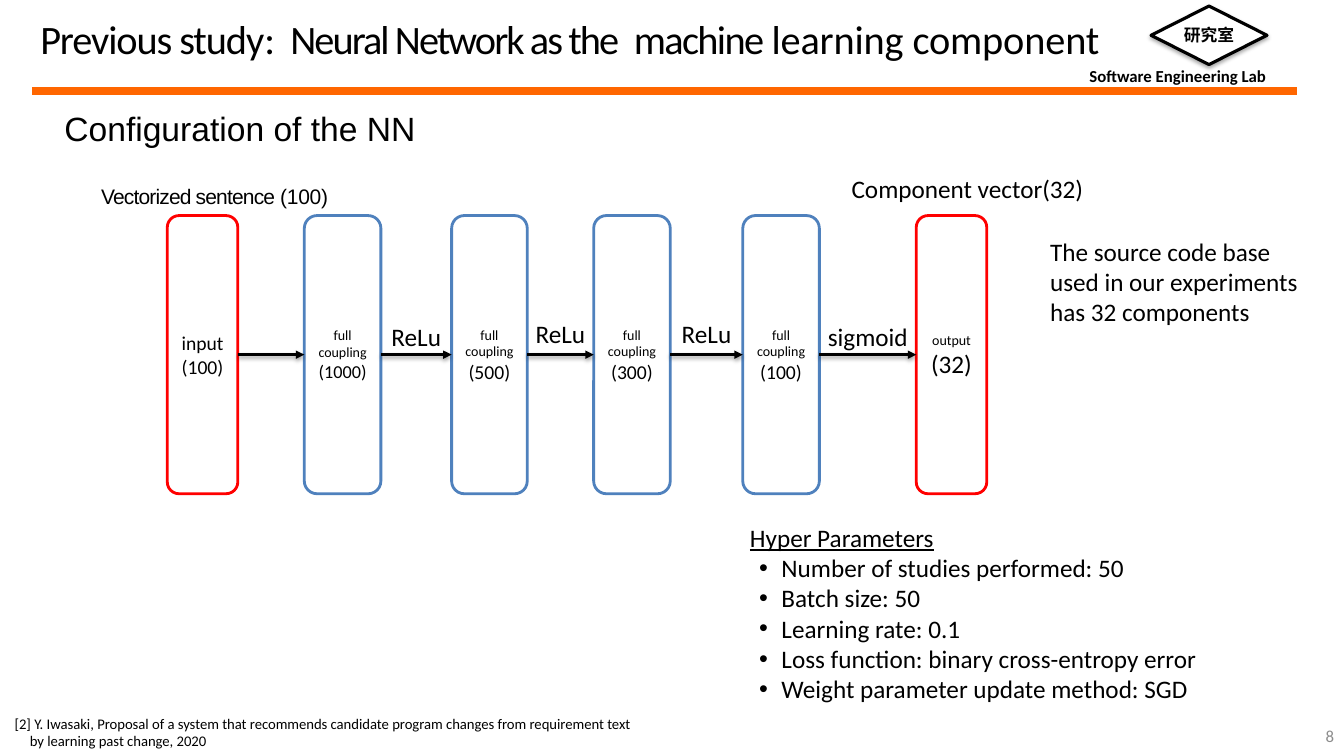
from lxml.etree import SubElement
from pptx import Presentation
from pptx.dml.color import RGBColor
from pptx.enum.shapes import MSO_CONNECTOR, MSO_SHAPE
from pptx.enum.text import MSO_ANCHOR as Anchor, MSO_AUTO_SIZE as AutoSize, PP_ALIGN as Align
from pptx.oxml.ns import qn
from pptx.util import Pt

BLACK = RGBColor(0, 0, 0)
WHITE = RGBColor(0xFF, 0xFF, 0xFF)
ORANGE = RGBColor(0xFF, 0x66, 0x00)
BLUE = RGBColor(0x4F, 0x81, 0xBD)
RED = RGBColor(0xFF, 0, 0)
GRAY = RGBColor(0x8C, 0x8C, 0x8C)

# Content: title and vector caption as (text, letter spacing in points)
TITLE = [("Previous study", -0.8), (": ", -0.7), (" Neural Network as the ", -1.4),
         (" machine ", -1.2), ("learning component", -0.1)]
INPUT_CAPTION = [("Vectorized sentence ", -0.6), ("(100)", -0.2)]
PARAMETERS = [
    "Hyper Parameters",
    "Number of studies performed: 50",
    "Batch size: 50",
    "Learning rate: 0.1",
    "Loss function: binary cross-entropy error",
    "Weight parameter update method: SGD",
]
# Layers: left, width, outline, name, name size, units, units size
LAYERS = [
    (119.5, 50.4, RED, "input", 14, "(100)", 14),
    (217.4, 54.7, BLUE, "full coupling", 10, "(1000)", 13),
    (322.6, 54, BLUE, "full coupling", 10, "(500)", 14),
    (424.1, 54.7, BLUE, "full coupling", 10, "(300)", 14),
    (530.6, 54.7, BLUE, "full coupling", 10, "(100)", 14),
    (654.5, 50.4, RED, "output", 10, "(32)", 18),
]
LAYER_TOP, LAYER_HEIGHT = 154, 198.7
# Activation after each layer: label, top
ACTIVATIONS = [None, ("ReLu", 226), ("ReLu", 224), ("ReLu", 224), ("sigmoid", 226)]
LABEL_WIDTH, LABEL_HEIGHT = 72, 27
# Texts: text, left, top, width, height, size, font, wrap
TEXTS = [
    ("Configuration of the NN", 38.9, 73.4, 289, 36, 24, "Arial", True),
    ("Component vector(32)", 601.2, 120.2, 182, 29, 18, "Calibri", False),
    ("The source code base used in our experiments has 32 components",
     743, 164.9, 194.4, 72.7, 18, "Calibri", True),
]
REFERENCE = ("[2] Y. Iwasaki, Proposal of a system that recommends candidate program changes "
             "from requirement text by learning past change, 2020")


def style(para, size, font="Calibri", color=BLACK, bold=False):
    for span in para.runs:
        span.font.size = Pt(size)
        span.font.name = font
        span.font.bold = bold
        span.font.color.rgb = color


def add_spaced(para, pieces, size, font):
    for text, spacing in pieces:
        span = para.add_run()
        span.text = text
        span.font._element.set("spc", str(round(spacing * 100)))
    style(para, size, font)


def add_text(page, text, left, top, width, height, size, font="Calibri", wrap=True,
             align=Align.LEFT, color=BLACK, bold=False):
    box = page.shapes.add_textbox(Pt(left), Pt(top), Pt(width), Pt(height))
    box.text_frame.word_wrap = wrap
    box.text_frame.text = text
    para = box.text_frame.paragraphs[0]
    para.alignment = align
    style(para, size, font, color, bold)
    return box


def add_box(page, kind, left, top, width, height, outline, weight):
    box = page.shapes.add_shape(kind, Pt(left), Pt(top), Pt(width), Pt(height))
    box.fill.solid()
    box.fill.fore_color.rgb = WHITE
    box.line.color.rgb = outline
    box.line.width = Pt(weight)
    box.shadow.inherit = False
    box.text_frame.vertical_anchor = Anchor.MIDDLE
    return box


def add_line(page, left, top, right, bottom, color, weight):
    line = page.shapes.add_connector(MSO_CONNECTOR.STRAIGHT, Pt(left), Pt(top), Pt(right), Pt(bottom))
    line.line.color.rgb = color
    line.line.width = Pt(weight)
    SubElement(line._element.spPr, qn("a:effectLst"))
    return line


def cast_shadow(shape, distance, opacity):
    effects = shape._element.spPr.find(qn("a:effectLst"))
    shadow = SubElement(effects, qn("a:outerShdw"), blurRad=str(Pt(3.1)),
                        dist=str(Pt(distance)), dir="5400000", rotWithShape="0")
    tint = SubElement(shadow, qn("a:srgbClr"), val="000000")
    SubElement(tint, qn("a:alpha"), val=str(opacity * 1000))


def set_indent(para, margin, first):
    properties = para._p.get_or_add_pPr()
    properties.set("marL", str(Pt(margin)))
    properties.set("indent", str(Pt(first)))
    return properties


def place(shape, left, top, width, height):
    shape.left, shape.top, shape.width, shape.height = Pt(left), Pt(top), Pt(width), Pt(height)
    shape.text_frame.auto_size = AutoSize.NONE


def add_header(page):
    add_line(page, 23, 64.8, 926.6, 64.8, ORANGE, 6)
    add_text(page, "Software Engineering Lab", 771.1, 43.2, 142.6, 21.6, 12, wrap=False, bold=True)
    badge = add_box(page, MSO_SHAPE.FLOWCHART_DECISION, 822.2, 4.3, 82.8, 41.8, BLACK, 2.25)
    cast_shadow(badge, 1.8, 35)
    badge.text_frame.word_wrap = False
    badge.text_frame.text = "研究室"
    badge.text_frame.paragraphs[0].alignment = Align.CENTER
    style(badge.text_frame.paragraphs[0], 12, bold=True)

    title = page.shapes.title
    place(title, 21.6, -3.6, 854.6, 61.9)
    title.text_frame.vertical_anchor = Anchor.MIDDLE
    para = title.text_frame.paragraphs[0]
    para.alignment = Align.LEFT
    add_spaced(para, TITLE, 28.8, "Calibri")


def add_parameters(page):
    body = page.placeholders[1]
    place(body, 528.5, 369.4, 337, 138.2)
    body.text_frame.word_wrap = False
    body.text_frame.text = "\n".join(PARAMETERS)
    for index, para in enumerate(body.text_frame.paragraphs):
        para.space_before = Pt(0)
        style(para, 18)
        if index == 0:
            SubElement(set_indent(para, 0, 0), qn("a:buNone"))
            para.runs[0].font.underline = True
        else:
            properties = set_indent(para, 22.5, -16)
            SubElement(properties, qn("a:buFont"), typeface="Arial")
            SubElement(properties, qn("a:buChar"), char="•")


def add_network(page):
    boxes = []
    for left, width, outline, name, name_size, units, units_size in LAYERS:
        box = add_box(page, MSO_SHAPE.ROUNDED_RECTANGLE, left, LAYER_TOP, width, LAYER_HEIGHT, outline, 2)
        box.text_frame.text = f"{name}\n{units}"
        for para, size in zip(box.text_frame.paragraphs, (name_size, units_size)):
            para.alignment = Align.CENTER
            style(para, size)
        boxes.append(box)

    # Arrows between neighbours, each label centred over its gap
    middle = LAYER_TOP + LAYER_HEIGHT / 2
    for index, activation in enumerate(ACTIVATIONS):
        start = LAYERS[index][0] + LAYERS[index][1]
        end = LAYERS[index + 1][0]
        arrow = add_line(page, start, middle, end, middle, BLACK, 2)
        arrow.begin_connect(boxes[index], 3)
        arrow.end_connect(boxes[index + 1], 1)
        SubElement(arrow.line._get_or_add_ln(), qn("a:tailEnd"), type="triangle")
        cast_shadow(arrow, 1.6, 38)
        if activation:
            label, top = activation
            add_text(page, label, (start + end - LABEL_WIDTH) / 2, top, LABEL_WIDTH, LABEL_HEIGHT,
                     18, wrap=False, align=Align.CENTER)


def add_notes_and_captions(page):
    for text in TEXTS:
        add_text(page, *text)
    caption = add_text(page, "", 71.3, 130.3, 217.4, 19.4, 15)
    frame = caption.text_frame
    frame.margin_left = frame.margin_right = frame.margin_bottom = 0
    frame.margin_top = Pt(0.9)
    frame.paragraphs[0].space_before = Pt(0.9)
    set_indent(frame.paragraphs[0], 0.9, 0)
    add_spaced(frame.paragraphs[0], INPUT_CAPTION, 15, "Arial")

    reference = add_text(page, REFERENCE, 0, 506.9, 463.7, 32.4, 10.5)
    set_indent(reference.text_frame.paragraphs[0], 14.2, -10.8)
    number = add_text(page, "8", 792, 511.2, 168, 28.8, 12, align=Align.RIGHT, color=GRAY)
    number.text_frame.vertical_anchor = Anchor.MIDDLE


def main():
    deck = Presentation()
    deck.slide_width, deck.slide_height = Pt(960), Pt(540)
    page = deck.slides.add_slide(deck.slide_layouts[1])
    add_header(page)
    add_parameters(page)
    add_network(page)
    add_notes_and_captions(page)
    deck.save("out.pptx")


if __name__ == "__main__":
    main()
